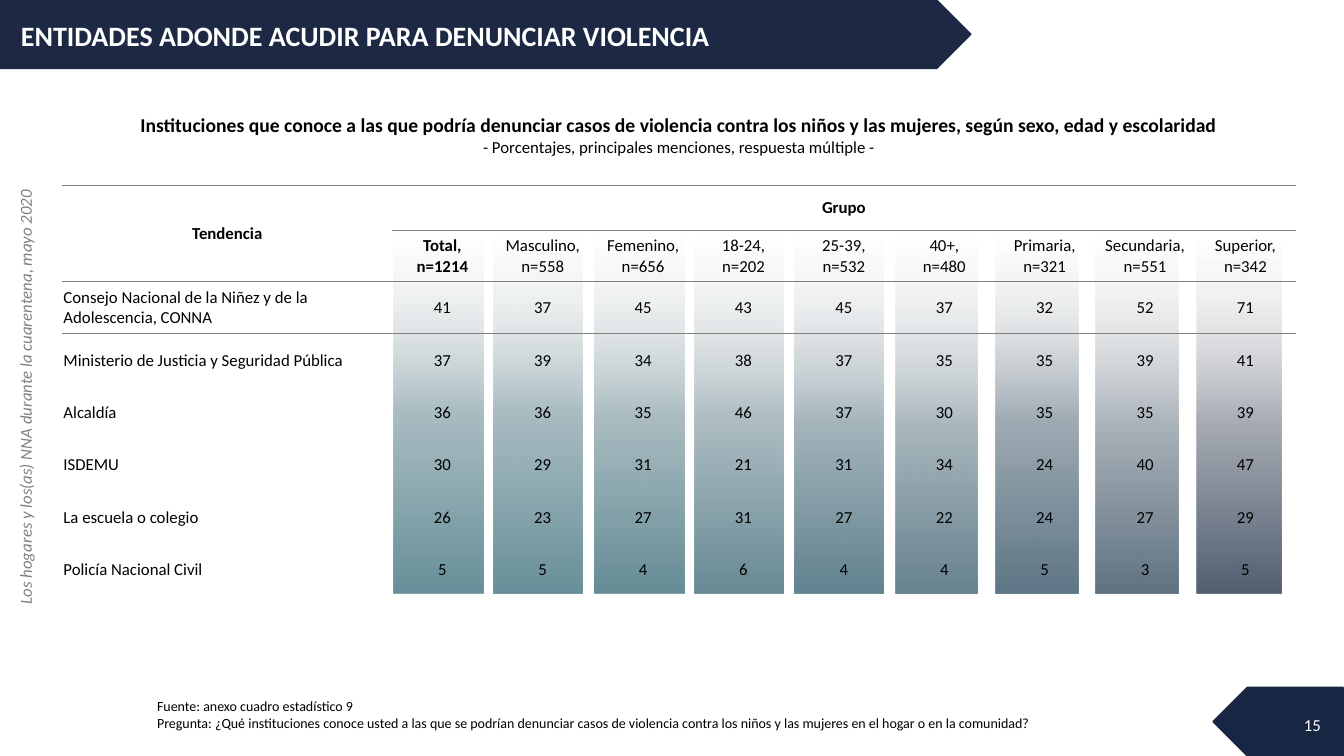
from lxml.etree import SubElement
from pptx import Presentation
from pptx.dml.color import RGBColor
from pptx.enum.shapes import MSO_SHAPE
from pptx.enum.text import MSO_ANCHOR, PP_ALIGN
from pptx.oxml.ns import qn
from pptx.util import Inches, Pt

COLORS = {"navy": "1D2944", "corner": "162643", "white": "FFFFFF",
          "black": "000000", "gray": "808080", "fade": "E9E8E8"}
PLAIN = "{2D5ABB26-0587-4C30-8999-92F81FD0307C}"

TITLE = "ENTIDADES ADONDE ACUDIR PARA DENUNCIAR VIOLENCIA"
SIDE = "Los hogares y los(as) NNA durante la cuarentena, mayo 2020"
HEADING = ("Instituciones que conoce a las que podría denunciar casos de violencia "
           "contra los niños y las mujeres, según sexo, edad y escolaridad")
SUBHEAD = "- Porcentajes, principales menciones, respuesta múltiple -"
SOURCE = ["Fuente: anexo cuadro estadístico 9",
          "Pregunta: ¿Qué instituciones conoce usted a las que se podrían denunciar casos "
          "de violencia contra los niños y las mujeres en el hogar o en la comunidad?"]
GROUPS = [["Total,", "n=1214"], ["Masculino, n=558"], ["Femenino,", "n=656"],
          ["18-24, n=202"], ["25-39, n=532"], ["40+,", "n=480"],
          ["Primaria,", "n=321"], ["Secundaria,", "n=551"], ["Superior,", "n=342"]]
DATA = [
    ("Consejo Nacional de la Niñez y de la Adolescencia, CONNA",
     [41, 37, 45, 43, 45, 37, 32, 52, 71]),
    ("Ministerio de Justicia y Seguridad Pública", [37, 39, 34, 38, 37, 35, 35, 39, 41]),
    ("Alcaldía", [36, 36, 35, 46, 37, 30, 35, 35, 39]),
    ("ISDEMU", [30, 29, 31, 21, 31, 34, 24, 40, 47]),
    ("La escuela o colegio", [26, 23, 27, 31, 27, 22, 24, 27, 29]),
    ("Policía Nacional Civil", [5, 5, 4, 6, 4, 4, 5, 3, 5]),
]
# Width, middle stop, middle color and end color of each group's bar
BARS = [(6.75, 50, "A9BCC1", "678F99"), (6.6, 50, "A9BCC1", "678F99"),
        (6.75, 51, "AABCC1", "658C96"), (6.6, 51, "AFBEC3", "668994"),
        (6.6, 53, "A4B4BB", "61828F"), (6.15, 54, "A8B6BC", "66828E"),
        (6.15, 52, "9FABB3", "5D7585"), (6.15, 54, "A8B1B8", "5F7281"),
        (6.3, 53, "A6ABB3", "515E70")]
FIRST, STEP = 24.53, 7.47
ROWS = [10.67, 6, 6.67] + [6.93] * len(DATA)


class Page:
    """Slide builder; every place and size is a percentage of the slide."""
    font = "Calibri"

    def __init__(self, deck):
        self.deck = deck
        self.slide = deck.slides.add_slide(deck.slide_layouts[6])

    def wide(self, share):
        return round(self.deck.slide_width * share / 100)

    def high(self, share):
        return round(self.deck.slide_height * share / 100)

    def place(self, left, top, width, height):
        return self.wide(left), self.high(top), self.wide(width), self.high(height)

    def add_run(self, par, words, size=12, color="black", bold=False,
                italic=False, align=PP_ALIGN.LEFT):
        par.alignment = align
        run = par.add_run()
        run.text = words
        font = run.font
        font.name, font.size = self.font, Pt(size)
        font.bold, font.italic = bold, italic
        font.color.rgb = RGBColor.from_string(COLORS[color])

    def add_lines(self, frame, lines, **style):
        for n, line in enumerate(lines):
            par = frame.paragraphs[0] if n == 0 else frame.add_paragraph()
            self.add_run(par, line, **style)

    def text(self, box, lines, turn=0, anchor=MSO_ANCHOR.TOP, **style):
        shape = self.slide.shapes.add_textbox(*self.place(*box))
        shape.rotation = turn
        frame = shape.text_frame
        frame.word_wrap = True
        frame.vertical_anchor = anchor
        self.add_lines(frame, lines, **style)

    def arrow(self, box, color, turn=0):
        shape = self.slide.shapes.add_shape(MSO_SHAPE.PENTAGON, *self.place(*box))
        shape.shadow.inherit = False
        shape.rotation = turn
        shape.fill.solid()
        shape.fill.fore_color.rgb = RGBColor.from_string(COLORS[color])
        shape.line.color.rgb = RGBColor.from_string(COLORS["navy"])
        shape.line.width = Pt(1)

    def bar(self, box, mid, tint, end):
        """Draw a bar that fades in from a clear top."""
        shape = self.slide.shapes.add_shape(
            MSO_SHAPE.ROUND_2_SAME_RECTANGLE, *self.place(*box))
        shape.shadow.inherit = False
        shape.line.fill.background()
        shape.fill.gradient()
        grad = shape.element.spPr.find(qn("a:gradFill"))
        for child in list(grad):
            grad.remove(child)
        stops = SubElement(grad, qn("a:gsLst"))
        for pos, color in ((0, COLORS["fade"]), (mid, tint), (100, end)):
            stop = SubElement(stops, qn("a:gs"), pos=str(pos * 1000))
            paint = SubElement(stop, qn("a:srgbClr"), val=color)
            if pos == 0:
                SubElement(paint, qn("a:alpha"), val="0")
        SubElement(grad, qn("a:lin"), ang="5400000", scaled="0")

    def table(self, left, top, cols, rows):
        box = self.place(left, top, sum(cols), sum(rows))
        frame = self.slide.shapes.add_table(len(rows), len(cols), *box)
        for style in frame.element.iter(qn("a:tableStyleId")):
            style.text = PLAIN
        grid = frame.table
        grid.first_row = grid.horz_banding = False
        for col, share in zip(grid.columns, cols):
            col.width = self.wide(share)
        for row, share in zip(grid.rows, rows):
            row.height = self.high(share)
        return grid

    def cell(self, cell, lines, sides=(), tight=False, **style):
        for side in sides:
            line = SubElement(cell._tc.get_or_add_tcPr(), qn("a:" + side), w="12700")
            paint = SubElement(line, qn("a:solidFill"))
            SubElement(paint, qn("a:srgbClr"), val=COLORS["gray"])
        cell.fill.background()
        cell.vertical_anchor = MSO_ANCHOR.MIDDLE
        if tight:
            cell.margin_left = cell.margin_right = cell.margin_top = Inches(0.01)
            cell.margin_bottom = 0
        self.add_lines(cell.text_frame, lines, **style)


def fill(page, grid):
    mid = PP_ALIGN.CENTER
    both = ("lnT", "lnB")
    count = len(GROUPS)
    grid.cell(0, 0).merge(grid.cell(0, count))
    grid.cell(1, 0).merge(grid.cell(2, 0))
    grid.cell(1, 2).merge(grid.cell(1, count - 1))
    for col in range(count + 1):
        page.cell(grid.cell(0, col), [], ("lnB",))
        label = {0: ["Tendencia"], 2: ["Grupo"]}.get(col, [])
        page.cell(grid.cell(1, col), label, both, bold=True, align=mid)
    page.cell(grid.cell(2, 0), [], ("lnB",))
    for col, lines in enumerate(GROUPS, 1):
        page.cell(grid.cell(2, col), lines, both, bold=col == 1, align=mid)

    head = grid.cell(0, 0)
    head.margin_bottom = Inches(0.23)
    frame = head.text_frame
    page.add_run(frame.paragraphs[0], HEADING, size=14, bold=True, align=mid)
    page.add_run(frame.add_paragraph(), SUBHEAD, align=mid)

    for row, (name, values) in enumerate(DATA, 3):
        sides = ("lnT",) if row == 3 else ()
        page.cell(grid.cell(row, 0), [name], sides, tight=True)
        for col, value in enumerate(values, 1):
            page.cell(grid.cell(row, col), [str(value)], sides, tight=True, align=mid)


def main():
    deck = Presentation()
    deck.slide_width, deck.slide_height = Inches(13.33), Inches(7.5)
    page = Page(deck)
    page.arrow((0, 0, 72.24, 9.07), "navy")
    page.arrow((90.25, 90.93, 9.68, 9.07), "corner", turn=180)
    page.text((76.52, 93.2, 22.5, 5.33), ["15"], anchor=MSO_ANCHOR.MIDDLE,
              color="white", align=PP_ALIGN.RIGHT)
    page.text((-19.28, 50.53, 42.31, 4), [SIDE], turn=270, color="gray",
              italic=True, align=PP_ALIGN.CENTER)
    for n, (width, *tints) in enumerate(BARS):
        page.bar((29.26 + STEP * n, 30.67, width, 47.87), *tints)
    fill(page, page.table(4.65, 13.87, [FIRST] + [STEP] * len(GROUPS), ROWS))
    page.text((0.82, 1.73, 72, 5.87), [TITLE], size=20, color="white", bold=True)
    page.text((10.95, 91.6, 78.24, 5.87), SOURCE, size=10)
    deck.save("out.pptx")


if __name__ == "__main__":
    main()
